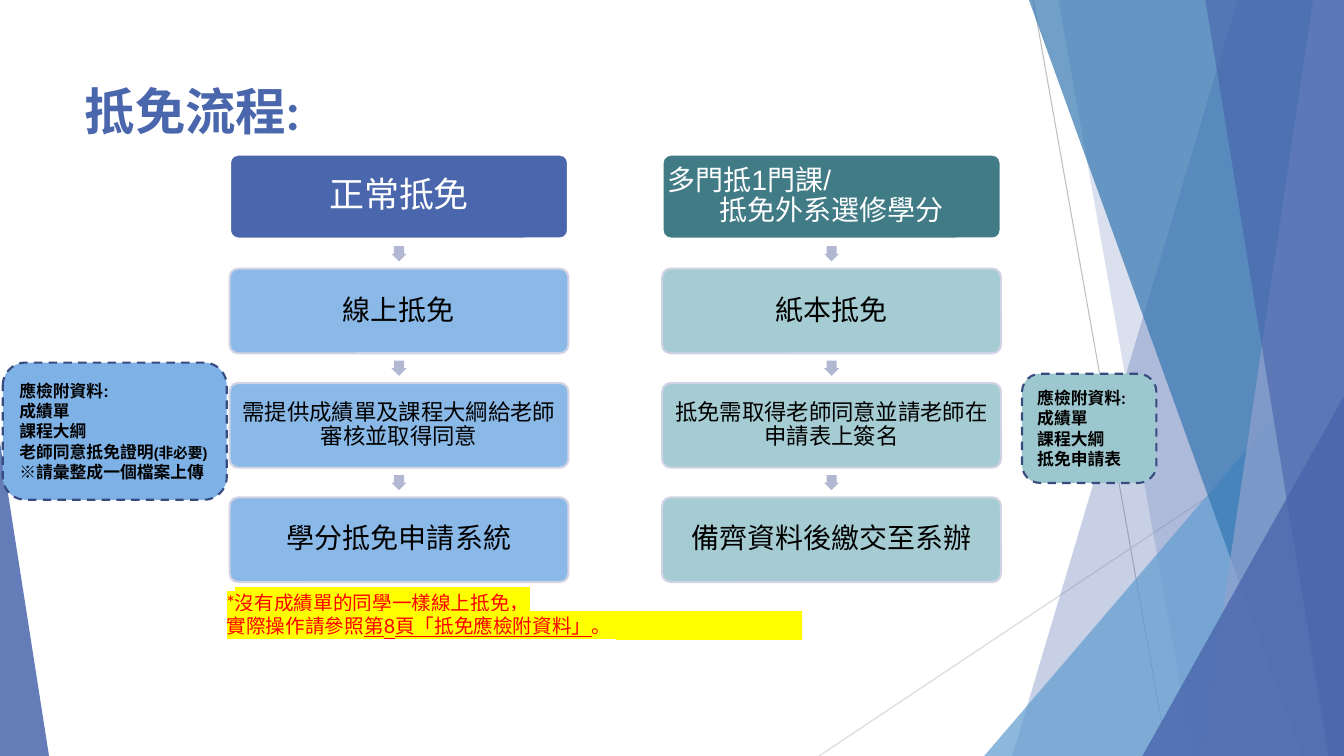
from lxml.etree import SubElement
from pptx import Presentation
from pptx.dml.color import RGBColor
from pptx.enum.dml import MSO_LINE
from pptx.enum.shapes import MSO_CONNECTOR, MSO_SHAPE
from pptx.enum.text import MSO_ANCHOR, PP_ALIGN
from pptx.oxml.ns import qn
from pptx.util import Pt

# Content
TITLE = "抵免流程:"
# left edge, head fill, step fill, head (lines, size, font), steps (text, size, font)
FLOWS = [
    (164, "4A66AC", "7EB2E6", (["正常抵免"], 25, "Lato"), [
        ("線上抵免", 20, "Lato"),
        ("需提供成績單及課程大綱給老師審核並取得同意", 16, "Arial"),
        ("學分抵免申請系統", 20, "Lato")]),
    (473, "417B85", "9CC7CE", (["多門抵1門課/", "抵免外系選修學分"], 20, "Arial"), [
        ("紙本抵免", 20, "Lato"),
        ("抵免需取得老師同意並請老師在申請表上簽名", 16, "Lato"),
        ("備齊資料後繳交至系辦", 20, "Lato")]),
]
# box, fill, font, lines of (text, size) runs
NOTES = [
    ((2, 259, 160, 98), "7EB2E6", "Arial", [
        [("應檢附資料:", 12)], [("成績單", 12)], [("課程大綱", 12)],
        [("老師同意抵免證明", 12), ("(非必要)", 10.5)],
        [("※請彙整成一個檔案上傳", 12)]]),
    ((730, 267, 96, 78), "9CC7CE", "Lato", [
        [("應檢附資料:", 12)], [("成績單", 12)], [("課程大綱", 12)],
        [("抵免申請表", 12)]]),
]
# lines of (text, underlined) runs
REMARK = [
    [("*沒有成績單的同學一樣線上抵免，", False)],
    [("實際操作請參照", False), ("第8頁「抵免應檢附資料」", True), ("。", False)],
]
# Backdrop: lines, then facets of (shape, fill, opacity) from back to front;
# a band is its top and bottom left x, a triangle its box and apex
RAYS = [((738, 0), (834, 540), "BFBFBF"), ((960, 290), (585, 540), "D9D9D9")]
FACETS = [
    ((884, 723), "4A66AC", 30),
    ((756, 852), "4A66AC", 20),
    ((703, 240, 257, 300, 1), "629DD1", 72),
    ((735, 930), "3477B2", 70),
    ((938, 858), "90A2CF", 70),
    ((861, 949), "4A66AC", 65),
    ((816, 283, 144, 257, 1), "4A66AC", 80),
    ((0, 316, 35, 224, 0), "4A66AC", 85),
]
WIDE, HIGH = 960, 540
TOP, STEP, CARD_W, CARD_H, ARROW = 110.2, 81.7, 242, 60.5, 10.8

prs = Presentation()
prs.slide_width, prs.slide_height = Pt(WIDE), Pt(HIGH)
slide = prs.slides.add_slide(prs.slide_layouts[5])
shapes = slide.shapes


def color(code):
    return RGBColor.from_string(code)


def paint(shape, fill, alpha=100, line=None, width=1.5):
    shape.shadow.inherit = False
    shape.fill.solid()
    shape.fill.fore_color.rgb = color(fill)
    if alpha < 100:
        tint = shape._element.spPr.find(qn("a:solidFill"))[0]
        SubElement(tint, qn("a:alpha")).set("val", str(alpha * 1000))
    if line:
        shape.line.color.rgb = color(line)
        shape.line.width = Pt(width)
    else:
        shape.line.fill.background()


def add(kind, box, fill, **style):
    shape = shapes.add_shape(kind, *map(Pt, box))
    paint(shape, fill, **style)
    return shape


def write(para, text, size, name, code="000000", bold=False):
    run = para.add_run()
    run.text = text
    font = run.font
    font.size, font.name, font.bold = Pt(size), name, bold
    font.color.rgb = color(code)
    return run


def lines(frame, items):
    """Yield one paragraph for each item."""
    for i, item in enumerate(items):
        yield (frame.add_paragraph() if i else frame.paragraphs[0]), item


def card(box, fill, texts, size, name, code, **style):
    shape = add(MSO_SHAPE.ROUNDED_RECTANGLE, box, fill, **style)
    shape.adjustments[0] = 0.1
    frame = shape.text_frame
    frame.word_wrap = True
    frame.vertical_anchor = MSO_ANCHOR.MIDDLE
    frame.margin_left = frame.margin_right = Pt(2)
    frame.margin_top = frame.margin_bottom = Pt(2)
    for para, text in lines(frame, texts):
        para.line_spacing = 0.9
        last = text == texts[-1]
        para.alignment = PP_ALIGN.CENTER if last else PP_ALIGN.LEFT
        write(para, text, size, name, code)


# Backdrop
for start, end, code in RAYS:
    ray = shapes.add_connector(MSO_CONNECTOR.STRAIGHT, *map(Pt, start + end))
    ray.line.color.rgb = color(code)
    ray.line.width = Pt(0.75)
    SubElement(ray._element.spPr, qn("a:effectLst"))
for form, fill, alpha in FACETS:
    if len(form) == 2:
        high, low = form
        pen = shapes.build_freeform(Pt(high), 0)
        pen.add_line_segments(
            [(Pt(WIDE), 0), (Pt(WIDE), Pt(HIGH)), (Pt(low), Pt(HIGH))])
        paint(pen.convert_to_shape(), fill, alpha)
    else:
        facet = add(MSO_SHAPE.ISOSCELES_TRIANGLE, form[:4], fill, alpha=alpha)
        facet.adjustments[0] = form[4]

# Title
title = shapes.title
title.left, title.top, title.width, title.height = map(Pt, (53.3, 48, 677, 62))
title.text_frame.vertical_anchor = MSO_ANCHOR.MIDDLE
head = title.text_frame.paragraphs[0]
head.alignment = PP_ALIGN.LEFT
write(head, TITLE, 36, "Lato", "4A66AC", True)

# Flow columns
for left, dark, light, (texts, size, name), steps in FLOWS:
    card((left, TOP, CARD_W, CARD_H), dark, texts, size, name, "FFFFFF",
         line="FFFFFF", width=2)
    for i, (text, size, name) in enumerate(steps, 1):
        y = TOP + i * STEP
        gap = (STEP - CARD_H - ARROW) / 2
        arrow = add(MSO_SHAPE.DOWN_ARROW, (left + (CARD_W - ARROW) / 2,
                    y - gap - ARROW, ARROW, ARROW), "B2B8D2")
        arrow.adjustments[0] = 0.667
        card((left, y, CARD_W, CARD_H), light, [text], size, name, "000000",
             alpha=90, line="D0D3E3")

# Remark with its yellow marker
add(MSO_SHAPE.RECTANGLE, (440, 436.5, 133, 20.5), "FFFF00")
frame = shapes.add_textbox(*map(Pt, (154.8, 418.3, 285, 41))).text_frame
frame.word_wrap = True
for para, parts in lines(frame, REMARK):
    for text, under in parts:
        run = write(para, text, 14, "Lato", "FF0000")
        run.font.underline = under
        props = run.font._element
        mark = SubElement(props, qn("a:highlight"))
        SubElement(mark, qn("a:srgbClr")).set("val", "FFFF00")
        props.find(qn("a:solidFill")).addnext(mark)

# Side notes
for box, fill, name, rows in NOTES:
    note = add(MSO_SHAPE.ROUNDED_RECTANGLE, box, fill, line="374B7F")
    note.line.dash_style = MSO_LINE.DASH
    frame = note.text_frame
    frame.word_wrap = True
    frame.vertical_anchor = MSO_ANCHOR.MIDDLE
    for para, parts in lines(frame, rows):
        para.alignment = PP_ALIGN.LEFT
        for text, size in parts:
            write(para, text, size, name, bold=True)

prs.save("out.pptx")
